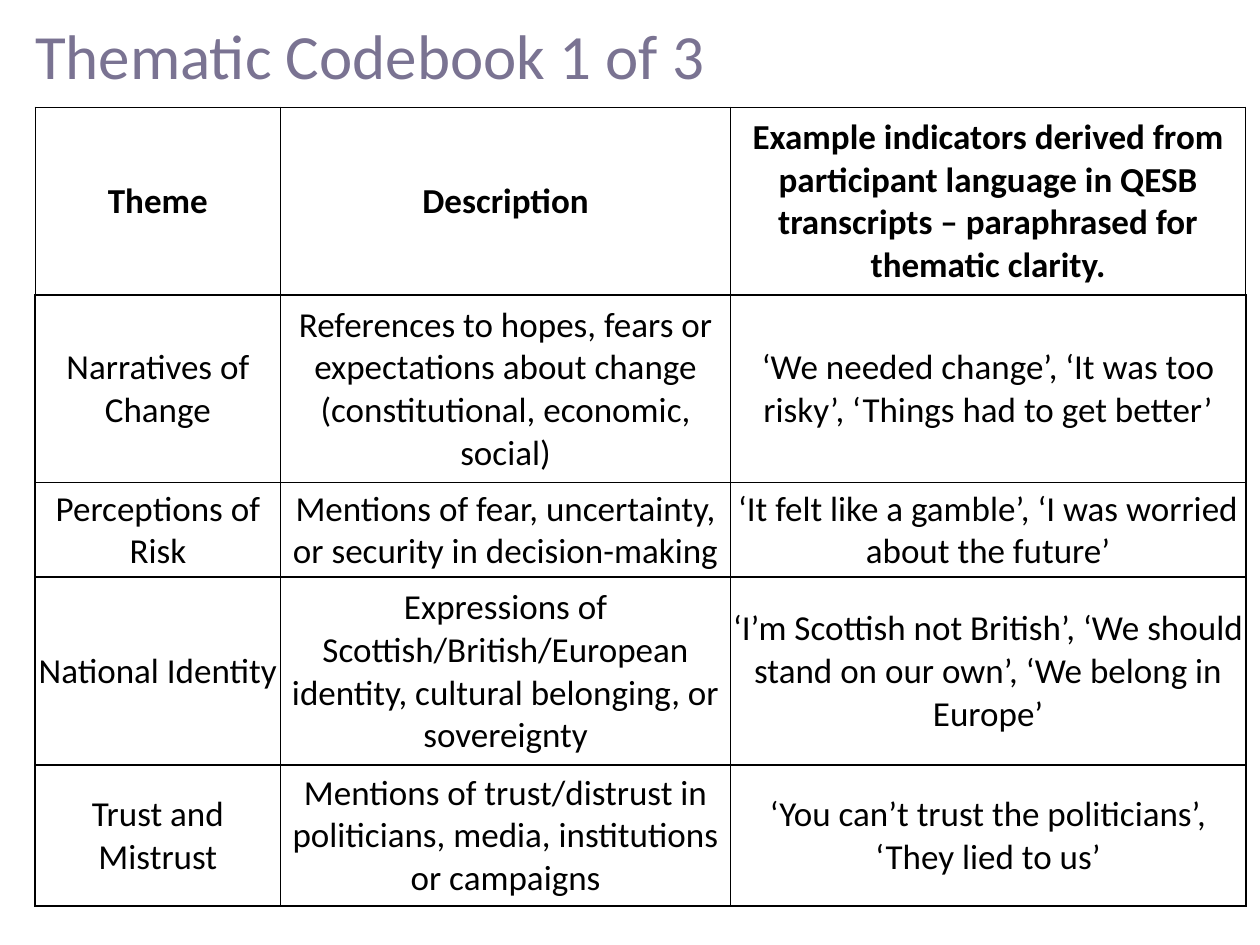
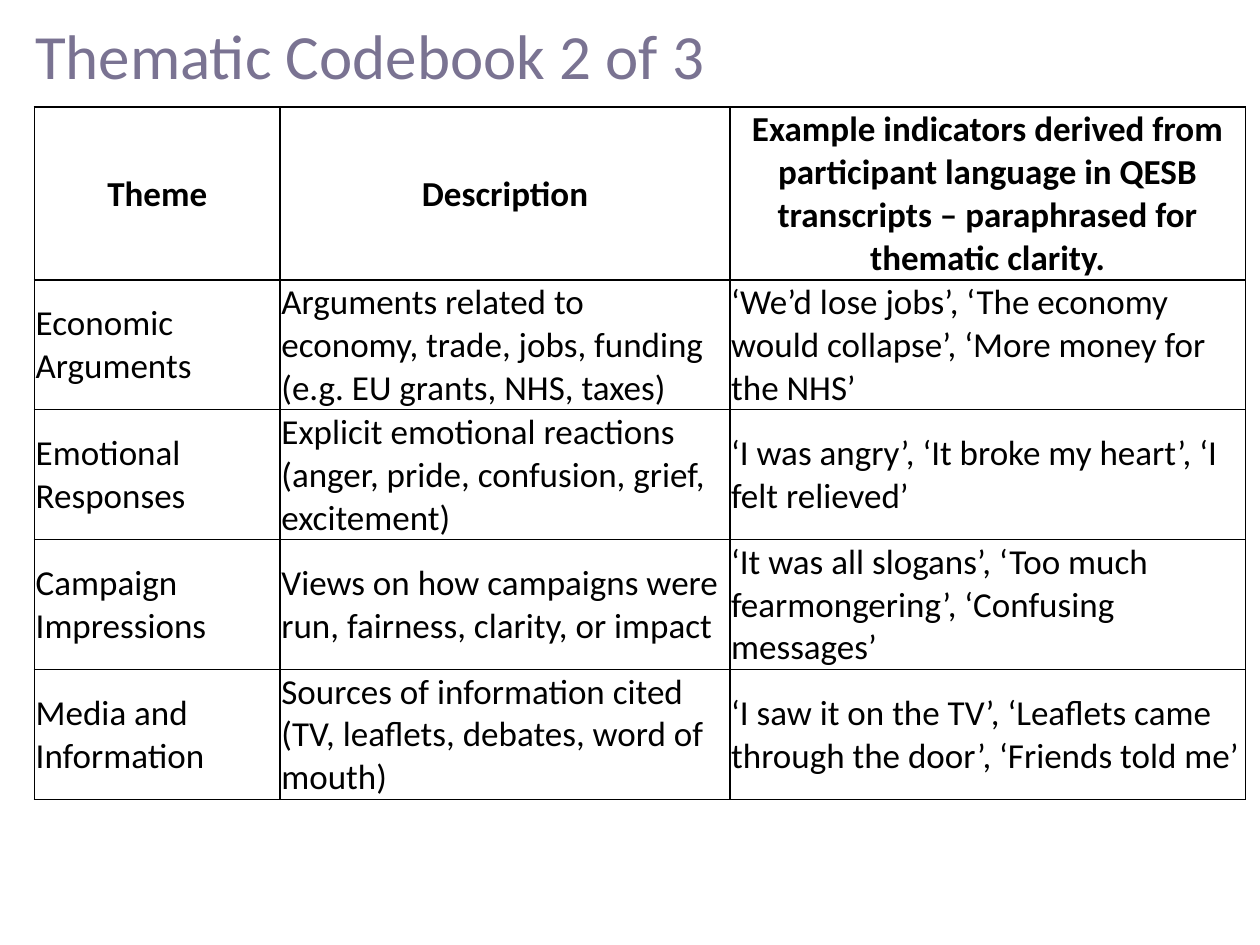
from dataclasses import dataclass

from pptx import Presentation
from pptx import util as u
from pptx.dml import color
from pptx.enum import text as t
from pptx.oxml import parse_xml
from pptx.oxml import ns


@dataclass(frozen=True)
class Theme:
    font: str = "Calibri"
    title_color: str = "7A7392"
    ink: str = "000000"
    title_size: int = 36
    table_size: int = 20


theme = Theme()


def write(frame, words, size=theme.table_size, ink=theme.ink, bold=False,
          align=t.PP_ALIGN.LEFT):
    frame.word_wrap = True
    para = frame.paragraphs[0]
    para.alignment = align
    span = para.add_run()
    span.text = words
    span.font.name = theme.font
    span.font.size = u.Pt(size)
    span.font.bold = bold
    span.font.color.rgb = color.RGBColor.from_string(ink)


def draw_border(cell, side, width):
    cell._tc.get_or_add_tcPr().append(parse_xml(
        f'<a:ln{side} {ns.nsdecls("a")} w="{u.Pt(width)}">'
        f'<a:solidFill><a:srgbClr val="{theme.ink}"/></a:solidFill></a:ln{side}>'))


header = (
    "Theme",
    "Description",
    "Example indicators derived from participant language in QESB "
    "transcripts – paraphrased for thematic clarity.",
)
column_widths = (140.4, 257, 294.5)

codebooks = [
    dict(
        title="Thematic Codebook 1 of 3",
        left=20,
        row_heights=(107.3, 107.3, 54, 107.3, 80.6),
        header_line=0.5,
        align=t.PP_ALIGN.CENTER,
        themes=[
            ("Narratives of Change",
             "References to hopes, fears or expectations about change "
             "(constitutional, economic, social)",
             "‘We needed change’, ‘It was too risky’, ‘Things had to get better’"),
            ("Perceptions of Risk",
             "Mentions of fear, uncertainty, or security in decision-making",
             "‘It felt like a gamble’, ‘I was worried about the future’"),
            ("National Identity",
             "Expressions of Scottish/British/European identity, "
             "cultural belonging, or sovereignty",
             "‘I’m Scottish not British’, ‘We should stand on our own’, "
             "‘We belong in Europe’"),
            ("Trust and Mistrust",
             "Mentions of trust/distrust in politicians, media, "
             "institutions or campaigns",
             "‘You can’t trust the politicians’, ‘They lied to us’"),
        ],
    ),
    dict(
        title="Thematic Codebook 2 of 3",
        left=19.7,
        row_heights=(98.3, 74, 74, 74, 74),
        header_line=1,
        align=t.PP_ALIGN.LEFT,
        themes=[
            ("Economic Arguments",
             "Arguments related to economy, trade, jobs, funding "
             "(e.g. EU grants, NHS, taxes)",
             "‘We’d lose jobs’, ‘The economy would collapse’, "
             "‘More money for the NHS’"),
            ("Emotional Responses",
             "Explicit emotional reactions (anger, pride, confusion, "
             "grief, excitement)",
             "‘I was angry’, ‘It broke my heart’, ‘I felt relieved’"),
            ("Campaign Impressions",
             "Views on how campaigns were run, fairness, clarity, or impact",
             "‘It was all slogans’, ‘Too much fearmongering’, "
             "‘Confusing messages’"),
            ("Media and Information",
             "Sources of information cited (TV, leaflets, debates, "
             "word of mouth)",
             "‘I saw it on the TV’, ‘Leaflets came through the door’, "
             "‘Friends told me’"),
        ],
    ),
]

deck = Presentation()
deck.slide_width, deck.slide_height = u.Pt(720), u.Pt(540)

for codebook in codebooks:
    page = deck.slides.add_slide(deck.slide_layouts[5])

    title = page.shapes.title
    title.left, title.top = u.Pt(20), u.Pt(9.4)
    title.width, title.height = u.Pt(513.4), u.Pt(104.4)
    frame = title.text_frame
    frame.margin_left = frame.margin_right = 0
    frame.margin_top = frame.margin_bottom = 0
    frame.vertical_anchor = t.MSO_ANCHOR.TOP
    frame.auto_size = t.MSO_AUTO_SIZE.NONE
    write(frame, codebook["title"], size=theme.title_size, ink=theme.title_color)

    rows = [header, *codebook["themes"]]
    heights = codebook["row_heights"]
    table = page.shapes.add_table(
        len(rows), len(header), u.Pt(codebook["left"]), u.Pt(61.2),
        u.Pt(sum(column_widths)), u.Pt(sum(heights))).table
    table.first_row = table.horz_banding = False
    for column, width in zip(table.columns, column_widths):
        column.width = u.Pt(width)

    for row_index, words_in_row in enumerate(rows):
        table.rows[row_index].height = u.Pt(heights[row_index])
        is_header = row_index == 0
        for column_index, words in enumerate(words_in_row):
            cell = table.cell(row_index, column_index)
            cell.margin_left = cell.margin_right = cell.margin_top = u.Pt(0.72)
            cell.margin_bottom = 0
            cell.vertical_anchor = t.MSO_ANCHOR.MIDDLE
            for side in "LRTB":
                thin = is_header and side != "B"
                draw_border(cell, side, codebook["header_line"] if thin else 1)
            cell.fill.background()
            write(cell.text_frame, words, bold=is_header,
                  align=t.PP_ALIGN.CENTER if is_header else codebook["align"])

deck.save("out.pptx")
